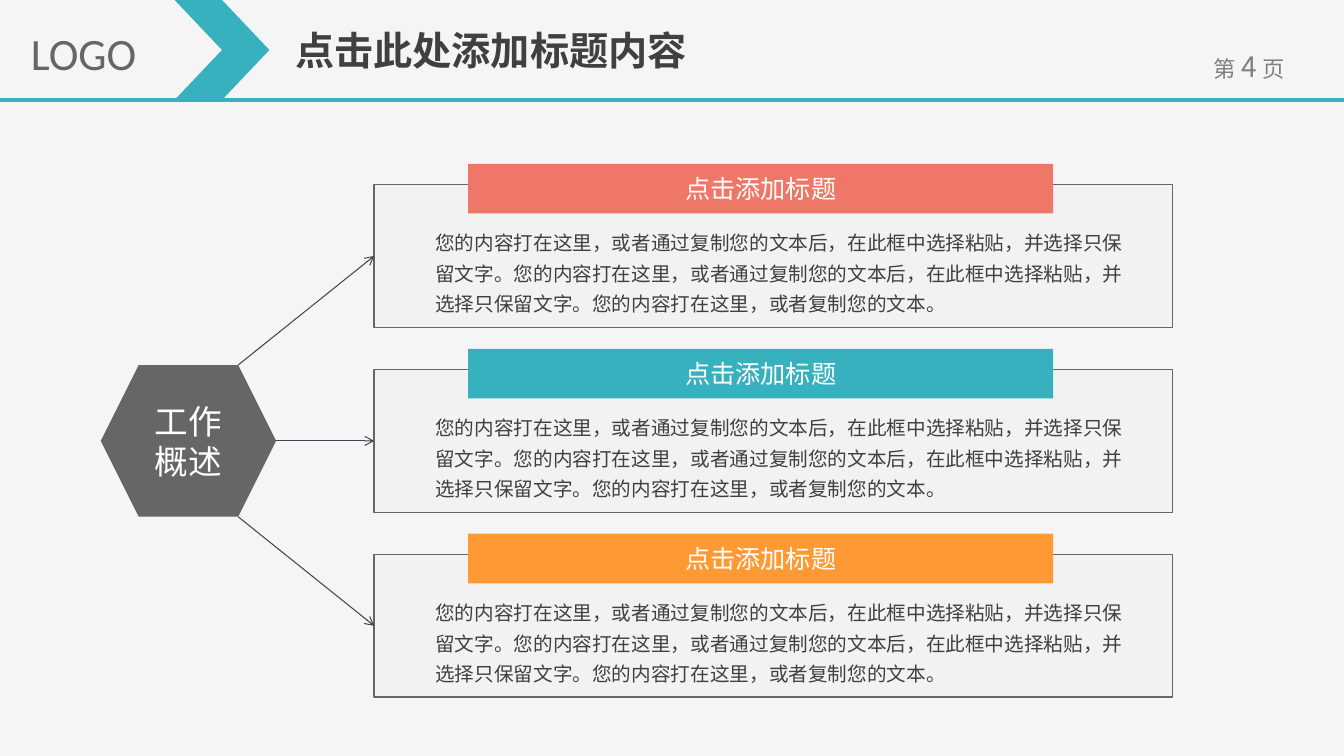
from lxml import etree
from pptx import Presentation
from pptx.dml.color import RGBColor
from pptx.enum import shapes as sh, text as tx
from pptx.oxml.ns import qn
from pptx.util import Cm, Pt

HAN = "Noto Sans CJK SC"
TEAL, GREY, DARK, WHITE = "38B1BF", "666666", "404040", "FFFFFF"
BODY = ("您的内容打在这里，或者通过复制您的文本后，在此框中选择粘贴，并选择只保留文字。"
        "您的内容打在这里，或者通过复制您的文本后，在此框中选择粘贴，并选择只保留文字。"
        "您的内容打在这里，或者复制您的文本。")
MID, TOP = tx.MSO_ANCHOR.MIDDLE, tx.MSO_ANCHOR.TOP
LEFT, CENTER = tx.PP_ALIGN.LEFT, tx.PP_ALIGN.CENTER


def write(shape, lines, color, anchor=TOP, align=LEFT, space=1, font=HAN, bold=False):
    """Fill a shape with paragraphs, each a list of (words, size) runs."""
    frame = shape.text_frame
    form = {"word_wrap": True, "vertical_anchor": anchor,
            "auto_size": tx.MSO_AUTO_SIZE.NONE,
            "margin_left": Cm(0.25), "margin_right": Cm(0.25),
            "margin_top": Cm(0.13), "margin_bottom": Cm(0.13)}
    for key, value in form.items():
        setattr(frame, key, value)
    for i, line in enumerate(lines):
        para = frame.add_paragraph() if i else frame.paragraphs[0]
        para.alignment, para.line_spacing = align, space
        for words, size in line:
            run = para.add_run()
            run.text = words
            for key, value in {"size": Pt(size), "name": font, "bold": bold}.items():
                setattr(run.font, key, value)
            run.font.color.rgb = RGBColor.from_string(color)
            etree.SubElement(run.font._element, qn("a:ea"), typeface=font)


def paint(shape, fill=None, line=None, width=1):
    """Set fill and outline, and take the theme's shadow away."""
    if fill:
        shape.shadow.inherit = False
        shape.fill.solid()
        shape.fill.fore_color.rgb = RGBColor.from_string(fill)
    else:
        etree.SubElement(shape.line._get_or_add_ln().getparent(), qn("a:effectLst"))
    if line:
        shape.line.color.rgb = RGBColor.from_string(line)
        shape.line.width = Pt(width)
    else:
        shape.line.fill.background()


deck = Presentation()
deck.slide_width, deck.slide_height = Cm(33.87), Cm(19.05)
slide = deck.slides.add_slide(deck.slide_layouts[5])
slide.background.fill.solid()
slide.background.fill.fore_color.rgb = RGBColor.from_string("F5F5F5")
items = slide.shapes
kind = sh.MSO_SHAPE
straight = sh.MSO_CONNECTOR.STRAIGHT

# Header
page = items.add_textbox(Cm(30), Cm(1.12), Cm(2.97), Cm(1.12))
write(page, [[("第", 16), (" ", 18), ("4", 20), (" ", 18), ("页", 16)]], "808080", align=CENTER)

rule = items.add_connector(straight, 0, Cm(2.52), deck.slide_width, Cm(2.52))
paint(rule, line=TEAL, width=2.25)

title = items.title
title.left, title.top, title.width, title.height = Cm(7.19), Cm(0.53), Cm(11.33), Cm(1.45)
write(title, [[("点击此处添加标题内容", 28)]], DARK, anchor=MID, bold=True)

mark = items.add_shape(kind.CHEVRON, Cm(4.4), 0, Cm(2.39), Cm(2.52))
paint(mark, TEAL)

logo = items.add_textbox(Cm(0.53), Cm(0.51), Cm(4.04), Cm(1.63))
write(logo, [[("LOGO", 32)]], GREY, font="Calibri")

# Hub
hub = items.add_shape(kind.HEXAGON, Cm(2.54), Cm(9.2), Cm(4.42), Cm(3.82))
paint(hub, GREY)
write(hub, [[("工作", 24)], [("概述", 24)]], WHITE, anchor=MID, align=CENTER)

# Three boxes, each with a banner, a body and an arrow from the hub
starts = [(6, 9.2), (6.96, 11.11), (6, 13.02)]
for row, (color, (x, y)) in enumerate(zip(["EF7768", TEAL, "FF9933"], starts)):
    top = 4.65 + 4.66 * row
    box = items.add_shape(kind.RECTANGLE, Cm(9.43), Cm(top), Cm(20.12), Cm(3.6))
    paint(box, "F2F2F2", GREY)

    banner = items.add_shape(kind.RECTANGLE, Cm(11.8), Cm(top - 0.52), Cm(14.74), Cm(1.25))
    paint(banner, color)
    write(banner, [[("点击添加标题", 18)]], WHITE, anchor=MID, align=CENTER)

    body = items.add_textbox(Cm(10.72), Cm(top + 0.87), Cm(18.05), Cm(2.55))
    write(body, [[(BODY, 14)]], DARK, space=1.3)

    arrow = items.add_connector(straight, Cm(x), Cm(y), Cm(9.43), Cm(top + 1.8))
    arrow.end_connect(box, 1)
    paint(arrow, line="414455", width=0.75)
    etree.SubElement(arrow.line._get_or_add_ln(), qn("a:tailEnd"), type="arrow")

deck.save("out.pptx")
